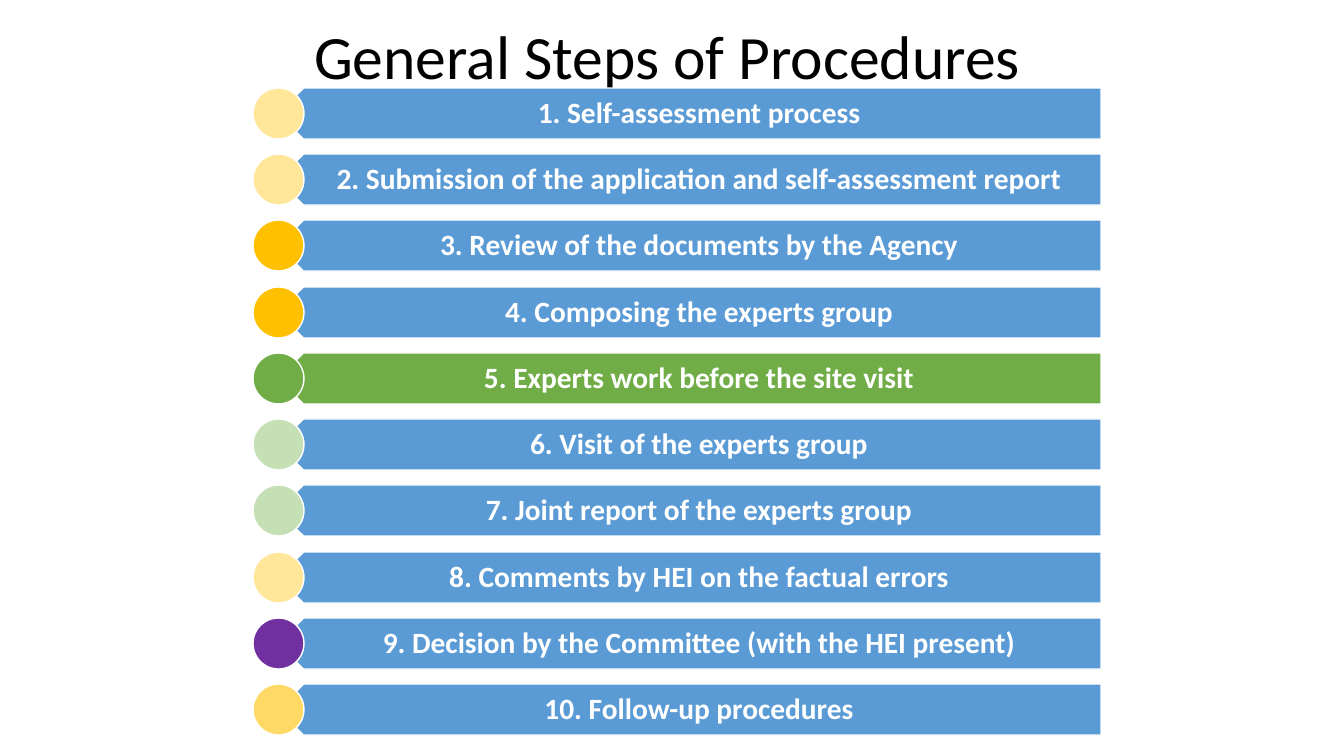
from dataclasses import dataclass

from pptx import Presentation
from pptx.dml.color import RGBColor
from pptx.enum.shapes import MSO_SHAPE as Preset
from pptx.enum.text import MSO_ANCHOR as Anchor, PP_ALIGN as Align
from pptx.shapes.autoshape import Shape
from pptx.util import Emu, Pt

# Lengths are in px, with 1344 px across the slide
EMU_PER_PX = 12192000 / 1344
SLIDE_W, SLIDE_H = 1344, 756

FIRST_TOP, LAST_TOP = 88, 684
ROW_H = 51
BAR_LEFT, BAR_W = 278, 823
LABEL_LEFT, LABEL_W = 291, 810
DOT_LEFT = 253

WHITE, BLACK = "FFFFFF", "000000"
BLUE, GREEN, PALE_GREEN = "5B9BD5", "70AD47", "C5E0B4"
PALE_GOLD, SOFT_GOLD, GOLD = "FFE699", "FFD966", "FFC000"
PURPLE = "7030A0"


@dataclass
class Step:
    label: str
    dot: str
    bar: str = BLUE


STEPS = [
    Step("Self-assessment process", PALE_GOLD),
    Step("Submission of the application and self-assessment report", PALE_GOLD),
    Step("Review of the documents by the Agency", GOLD),
    Step("Composing the experts group", GOLD),
    Step("Experts work before the site visit", GREEN, GREEN),
    Step("Visit of the experts group", PALE_GREEN),
    Step("Joint report of the experts group", PALE_GREEN),
    Step("Comments by HEI on the factual errors", PALE_GOLD),
    Step("Decision by the Committee (with the HEI present)", PURPLE),
    Step("Follow-up procedures", SOFT_GOLD),
]


def px(length: int) -> Emu:
    return Emu(round(length * EMU_PER_PX))


def color(hex_value: str) -> RGBColor:
    return RGBColor.from_string(hex_value)


def add_preset(shapes, preset: Preset, left: int, top: int, width: int,
               height: int, fill: str) -> Shape:
    outline = shapes.add_shape(preset, px(left), px(top), px(width), px(height))
    outline.shadow.inherit = False
    outline.fill.solid()
    outline.fill.fore_color.rgb = color(fill)
    outline.line.color.rgb = color(WHITE)
    outline.line.width = Pt(1)
    return outline


def add_text(shapes, text: str, left: int, top: int, width: int, height: int,
             *, size: int, ink: str, bold: bool = False,
             insets: tuple[int, int, int, int] = (10, 5, 10, 5)) -> None:
    box = shapes.add_textbox(px(left), px(top), px(width), px(height))
    frame = box.text_frame
    frame.word_wrap = True
    frame.vertical_anchor = Anchor.MIDDLE
    (frame.margin_left, frame.margin_top,
     frame.margin_right, frame.margin_bottom) = map(px, insets)
    paragraph = frame.paragraphs[0]
    paragraph.alignment = Align.CENTER
    paragraph.line_spacing = 0.9
    run = paragraph.add_run()
    run.text = text
    run.font.name = "Calibri"
    run.font.size = Pt(size)
    run.font.bold = bold
    run.font.color.rgb = color(ink)


def add_step(shapes, number: int, step: Step, top: int) -> None:
    bar = add_preset(shapes, Preset.PENTAGON, BAR_LEFT, top, BAR_W, ROW_H, step.bar)
    bar.rotation = 180
    add_text(shapes, f"{number}. {step.label}", LABEL_LEFT, top, LABEL_W, ROW_H,
             size=21, ink=WHITE, bold=True, insets=(22, 9, 16, 9))
    add_preset(shapes, Preset.OVAL, DOT_LEFT, top, ROW_H, ROW_H, step.dot)


def main() -> None:
    deck = Presentation()
    deck.slide_width, deck.slide_height = px(SLIDE_W), px(SLIDE_H)
    slide = deck.slides.add_slide(deck.slide_layouts[6])

    # Title
    add_text(slide.shapes, "General Steps of Procedures", 88, 0, 1159, 120,
             size=44, ink=BLACK)

    # Evenly spaced steps in one group
    procedure = slide.shapes.add_group_shape()
    pitch = (LAST_TOP - FIRST_TOP) / (len(STEPS) - 1)
    for index, step in enumerate(STEPS):
        add_step(procedure.shapes, index + 1, step, round(FIRST_TOP + index * pitch))

    deck.save("out.pptx")


if __name__ == "__main__":
    main()
